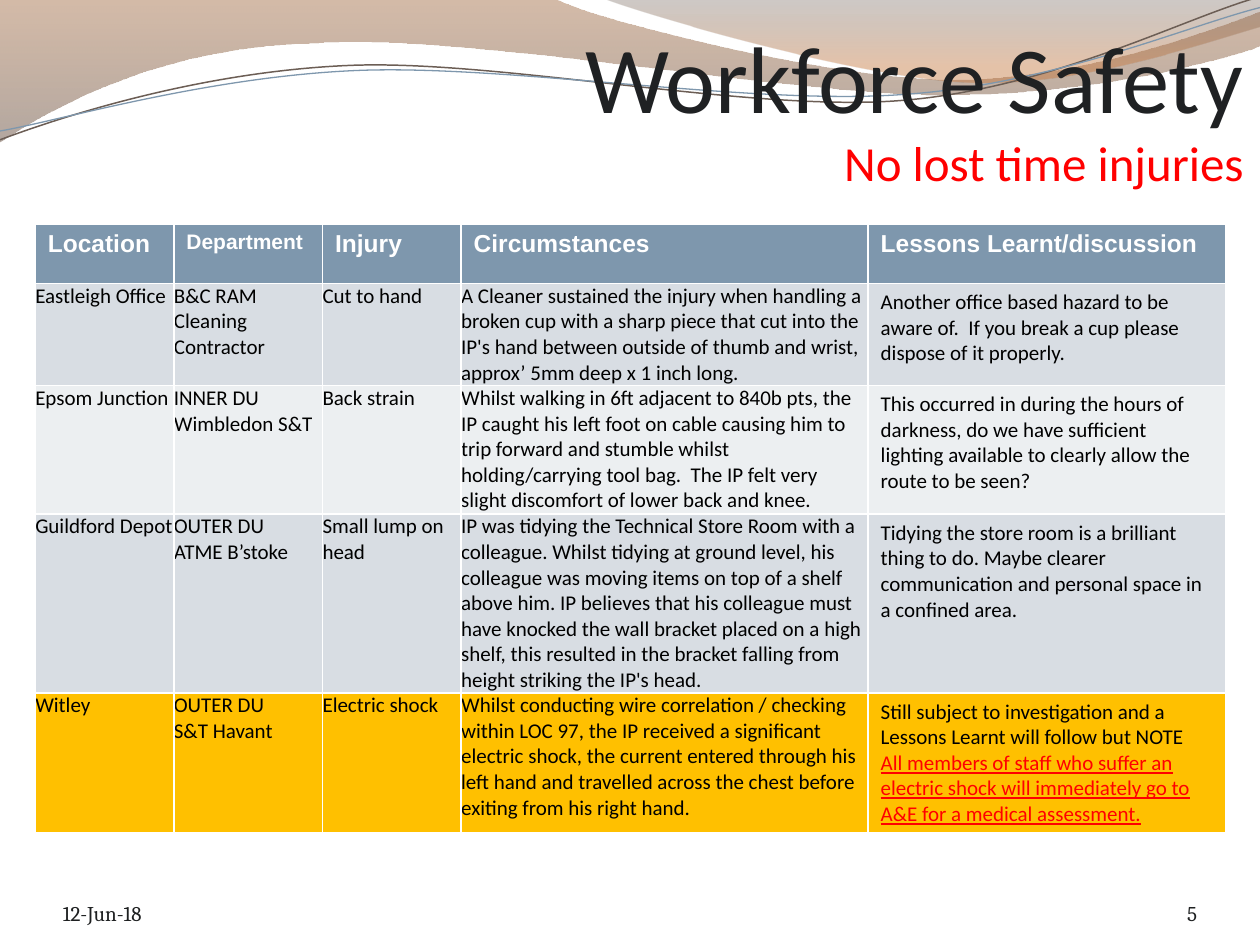
from dataclasses import dataclass

from lxml import etree
from pptx import Presentation
from pptx.dml import color
from pptx.enum import text
from pptx.oxml import ns
from pptx.util import Inches, Pt


@dataclass(frozen=True)
class Theme:
    title: str = "1F2123"
    footer: str = "1E2021"
    alert: str = "FF0000"
    body: str = "000000"
    white: str = "FFFFFF"
    steel: str = "7E97AD"
    brown: str = "6C5E55"
    band_dark: str = "D8DDE3"
    band_light: str = "ECEFF1"
    amber: str = "FFC000"
    left_wave: tuple = ((0, "9F683F", 45), (1, "755F51", 55))
    right_wave: tuple = ((0, "5D4E44", 30), (0.8, "C77A42", 45))
    sans: str = "Calibri"
    heading: str = "Arial"
    serif: str = "Cambria"
    title_size: int = 54
    subtitle_size: int = 28
    header_size: int = 14
    body_size: int = 12


THEME = Theme()
UNITS_PER_INCH = 1000

LEFT_WAVE = [
    (0, 0), (4.4, -0.01),
    (4.76, 0.17, 6.64, 0.63, 7.58, 0.63), (8.53, 0.63, 9.58, 0.26, 10, 0.09),
    (10.01, 0.36),
    (9.83, 0.44, 8.7, 0.76, 7.46, 0.75), (6.22, 0.75, 3.82, 0.28, 2.57, 0.34),
    (1.29, 0.36, 0.46, 0.83, -0.01, 1.13),
]
RIGHT_WAVE = [
    (4.79, -0.01),
    (5.09, 0.11, 6.82, 0.62, 7.69, 0.65), (8.56, 0.69, 9.61, 0.32, 10, 0.21),
    (10, 0),
]
BROWN_STRAND = [
    (0, 1.11), (0.48, 0.93, 1.58, 0.57, 2.77, 0.52),
    (3.95, 0.47, 5.93, 0.89, 7.13, 0.8), (8.33, 0.71, 9.38, 0.15, 9.98, -0.02),
]
STEEL_STRAND = [
    (0, 1.04), (0.47, 0.96, 1.64, 0.61, 2.83, 0.56),
    (4.03, 0.51, 5.97, 0.84, 7.17, 0.75), (8.36, 0.67, 9.41, 0.21, 10, 0.06),
]

COLUMNS = [1.1, 1.18, 1.1, 3.23, 2.84]
ROWS = [0.47, 0.81, 1.02, 1.42, 1.11]
HEADERS = ["Location", "Department", "Injury", "Circumstances", "Lessons Learnt/discussion"]
INCIDENTS = [
    (THEME.band_dark, [
        "Eastleigh Office", "B&C RAM\nCleaning Contractor", "Cut to hand",
        "A Cleaner sustained the injury when handling a broken cup with a sharp piece that cut "
        "into the IP's hand between outside of thumb and wrist, approx’ 5mm deep x 1 inch long.",
        "Another office based hazard to be aware of.  If you break a cup please dispose of it "
        "properly."]),
    (THEME.band_light, [
        "Epsom Junction", "INNER DU\nWimbledon S&T", "Back strain",
        "Whilst walking in 6ft adjacent to 840b pts, the IP caught his left foot on cable causing "
        "him to trip forward and stumble whilst holding/carrying tool bag.  The IP felt very "
        "slight discomfort of lower back and knee.",
        "This occurred in during the hours of darkness, do we have sufficient lighting available "
        "to clearly allow the route to be seen?"]),
    (THEME.band_dark, [
        "Guildford Depot", "OUTER DU\nATME B’stoke", "Small lump on head",
        "IP was tidying the Technical Store Room with a colleague. Whilst tidying at ground level, "
        "his colleague was moving items on top of a shelf above him. IP believes that his "
        "colleague must have knocked the wall bracket placed on a high shelf, this resulted in "
        "the bracket falling from height striking the IP's head.",
        "Tidying the store room is a brilliant thing to do. Maybe clearer communication and "
        "personal space in a confined area."]),
    (THEME.amber, [
        "Witley", "OUTER DU\nS&T Havant", "Electric shock",
        "Whilst conducting wire correlation / checking within LOC 97, the IP received a "
        "significant electric shock, the current entered through his left hand and travelled "
        "across the chest before exiting from his right hand.",
        "Still subject to investigation and a Lessons Learnt will follow but NOTE"]),
]
WARNING = ("All members of staff who suffer an electric shock will immediately go to A&E "
           "for a medical assessment.")


def rgb(value):
    return color.RGBColor.from_string(value)


def add_outline(page, outline, closed):
    segments = [[round(c * UNITS_PER_INCH) for c in segment] for segment in outline]
    anchors = [segment[-2:] for segment in segments]
    left, top = (min(axis) for axis in zip(*anchors))
    builder = page.shapes.build_freeform(*anchors[0], scale=Inches(1) / UNITS_PER_INCH)
    builder.add_line_segments(anchors[1:], close=closed)
    shape = builder.convert_to_shape()
    shape.shadow.inherit = False
    lines = list(shape._element.iter(ns.qn("a:lnTo")))
    for line, segment in zip(lines, segments[1:]):
        if len(segment) == 6:
            curve = etree.Element(ns.qn("a:cubicBezTo"))
            for x, y in zip(segment[::2], segment[1::2]):
                etree.SubElement(curve, ns.qn("a:pt"), x=str(x - left), y=str(y - top))
            line.getparent().replace(line, curve)
    return shape


def add_wave(page, outline, stops):
    shape = add_outline(page, outline, True)
    shape.line.fill.background()
    shape.fill.gradient()
    shape.fill.gradient_angle = 270
    for stop, (position, tint, _) in zip(shape.fill.gradient_stops, stops):
        stop.position = position
        stop.color.rgb = rgb(tint)
    for node, (_, _, opacity) in zip(shape._element.iter(ns.qn("a:srgbClr")), stops):
        etree.SubElement(node, ns.qn("a:alpha"), val=str(opacity * 1000))


def add_strand(page, outline, tint, width):
    shape = add_outline(page, outline, False)
    shape.fill.background()
    shape.line.color.rgb = rgb(tint)
    shape.line.width = Pt(width)


def add_span(para, words, size=THEME.body_size, font=THEME.sans, tint=THEME.body,
             bold=False, underline=False):
    span = para.add_run()
    span.text = words
    span.font.size = Pt(size)
    span.font.name = font
    span.font.color.rgb = rgb(tint)
    span.font.bold = bold
    span.font.underline = underline


def add_box(page, left, top, width, height, align=text.PP_ALIGN.LEFT):
    box = page.shapes.add_textbox(Inches(left), Inches(top), Inches(width), Inches(height))
    frame = box.text_frame
    frame.word_wrap = True
    frame.vertical_anchor = text.MSO_ANCHOR.BOTTOM
    frame.margin_left = frame.margin_right = frame.margin_top = frame.margin_bottom = 0
    para = frame.paragraphs[0]
    para.alignment = align
    return para


def fill_cell(cell, fill):
    cell.fill.solid()
    cell.fill.fore_color.rgb = rgb(fill)


def add_incident_table(page):
    table = page.shapes.add_table(
        len(ROWS), len(COLUMNS), Inches(0.28), Inches(1.78),
        Inches(sum(COLUMNS)), Inches(sum(ROWS))).table
    for column, width in zip(table.columns, COLUMNS):
        column.width = Inches(width)
    for row, height in zip(table.rows, ROWS):
        row.height = Inches(height)
    for cell, label in zip(table.rows[0].cells, HEADERS):
        fill_cell(cell, THEME.steel)
        size = THEME.body_size if label == "Department" else THEME.header_size
        add_span(cell.text_frame.paragraphs[0], label, size, THEME.heading, THEME.white, bold=True)
    for row_number, (fill, entries) in enumerate(INCIDENTS, 1):
        for column_number, entry in enumerate(entries):
            cell = table.cell(row_number, column_number)
            fill_cell(cell, fill)
            if column_number < len(COLUMNS) - 1:
                cell.margin_left = cell.margin_right = cell.margin_top = cell.margin_bottom = 0
            frame = cell.text_frame
            for line_number, words in enumerate(entry.split("\n")):
                para = frame.add_paragraph() if line_number else frame.paragraphs[0]
                add_span(para, words)
    table.cell(1, 3).vertical_anchor = text.MSO_ANCHOR.MIDDLE
    add_span(frame.add_paragraph(), WARNING, tint=THEME.alert, underline=True)


def main():
    deck = Presentation()
    deck.slide_width, deck.slide_height = Inches(10), Inches(7.5)
    page = deck.slides.add_slide(deck.slide_layouts[6])
    add_wave(page, LEFT_WAVE, THEME.left_wave)
    add_wave(page, RIGHT_WAVE, THEME.right_wave)
    add_strand(page, BROWN_STRAND, THEME.brown, 0.85)
    add_strand(page, STEEL_STRAND, THEME.steel, 0.75)
    title = add_box(page, 0.87, 0.27, 9, 1.25, text.PP_ALIGN.RIGHT)
    add_span(title, "Workforce Safety", THEME.title_size, tint=THEME.title)
    title.add_line_break()
    add_span(title, "No lost time injuries", THEME.subtitle_size, tint=THEME.alert)
    add_incident_table(page)
    date = add_box(page, 0.5, 6.95, 2.33, 0.4)
    add_span(date, "12-Jun-18", font=THEME.serif, tint=THEME.footer)
    number = add_box(page, 8.67, 6.95, 0.83, 0.4, text.PP_ALIGN.RIGHT)
    add_span(number, "5", font=THEME.serif, tint=THEME.footer)
    deck.save("out.pptx")


if __name__ == "__main__":
    main()
